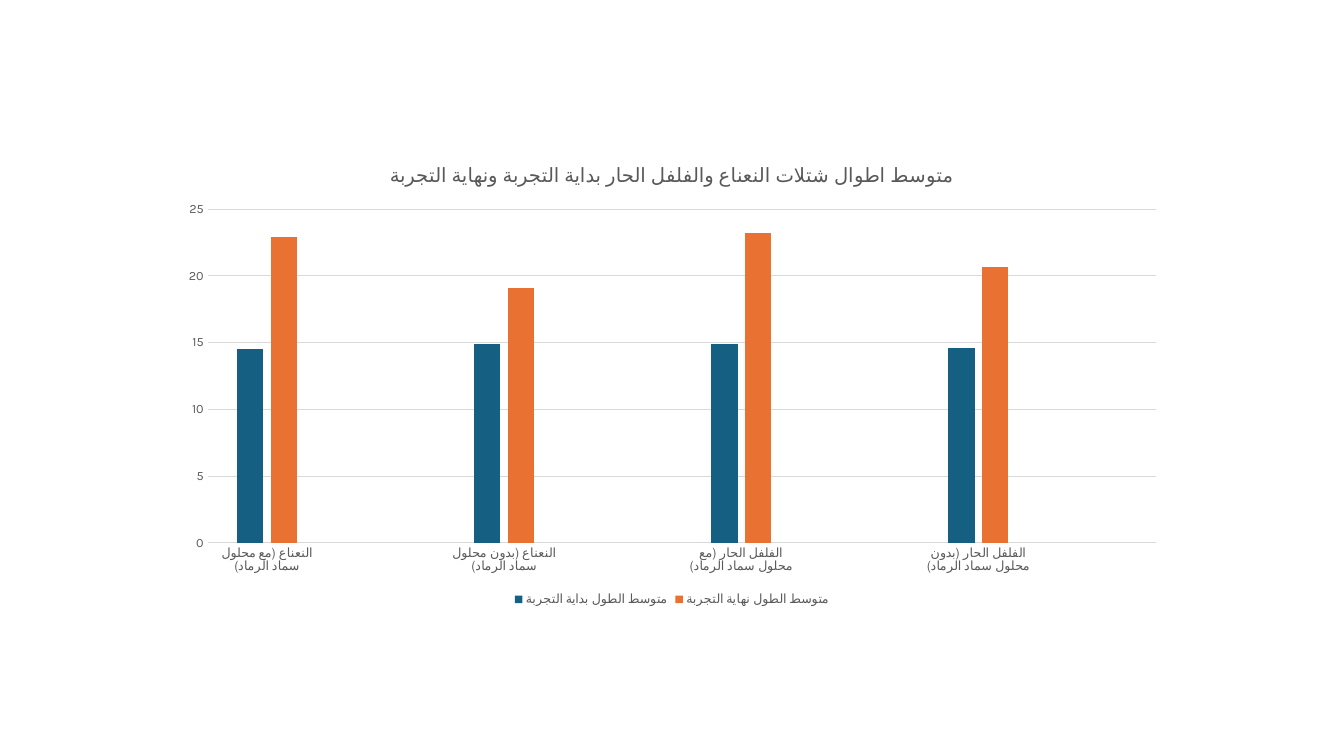
from lxml import etree
from pptx import Presentation
from pptx.chart.data import CategoryChartData
from pptx.dml.color import RGBColor
from pptx.enum.chart import XL_CHART_TYPE, XL_LEGEND_POSITION, XL_TICK_MARK
from pptx.oxml import parse_xml
from pptx.util import Pt

COLUMNS = XL_CHART_TYPE.COLUMN_CLUSTERED
BOTTOM = XL_LEGEND_POSITION.BOTTOM
NO_TICK = XL_TICK_MARK.NONE
CHART_NS = "http://schemas.openxmlformats.org/drawingml/2006/chart"
FACE, GREY, RULE = "Karla", "595959", "D9D9D9"


def color(code):
    return RGBColor.from_string(code)


def style(font, size):
    font.name = FACE
    font.size = Pt(size)
    font.bold = False
    font.color.rgb = color(GREY)


# Slide
deck = Presentation()
deck.slide_width, deck.slide_height = Pt(960), Pt(540)
slide = deck.slides.add_slide(deck.slide_layouts[6])

# Data: every plant group is followed by an empty slot
groups = [
    ("النعناع (مع محلول سماد الرماد)", 14.5, 22.9),
    ("النعناع (بدون محلول سماد الرماد)", 14.9, 19.1),
    ("الفلفل الحار (مع محلول سماد الرماد)", 14.9, 23.2),
    ("الفلفل الحار (بدون محلول سماد الرماد)", 14.6, 20.7),
]
names, starts, ends = [], [], []
for name, start, end in groups:
    names += [name, ""]
    starts += [start, None]
    ends += [end, None]

data = CategoryChartData(number_format="General")
data.categories = names
data.add_series("متوسط الطول بداية التجربة", starts)
data.add_series("متوسط الطول نهاية التجربة", ends)

# Chart
frame = slide.shapes.add_chart(
    COLUMNS, Pt(119.5), Pt(104.4), Pt(720.7), Pt(331.2), data)
chart = frame.chart
style(chart.font, 10)

# Title
chart.has_title = True
title = chart.chart_title.text_frame
title.text = "متوسط اطوال شتلات النعناع والفلفل الحار بداية التجربة ونهاية التجربة"
style(title.paragraphs[0].runs[0].font, 14)
chart.chart_title.include_in_layout = False

# Columns
plot = chart.plots[0]
plot.gap_width, plot.overlap = 219, -27
plot.vary_by_categories = False
for series, code in zip(plot.series, ("156082", "E97132")):
    series.format.fill.solid()
    series.format.fill.fore_color.rgb = color(code)
    series.invert_if_negative = False

# Axes
base, scale = chart.category_axis, chart.value_axis
for axis in (base, scale):
    axis.major_tick_mark = axis.minor_tick_mark = NO_TICK
    style(axis.tick_labels.font, 9)
scale.minimum_scale, scale.maximum_scale, scale.major_unit = 0, 25, 5
scale.has_major_gridlines = True
scale.format.line.fill.background()
for line in (base.format.line, scale.major_gridlines.format.line):
    line.color.rgb = color(RULE)
    line.width = Pt(0.75)

# Legend
chart.has_legend = True
chart.legend.position = BOTTOM
chart.legend.include_in_layout = False
style(chart.legend.font, 9)

# Plot area, as shares of the chart frame
layout = etree.Element(f"{{{CHART_NS}}}layout", nsmap={"c": CHART_NS})
manual = etree.SubElement(layout, f"{{{CHART_NS}}}manualLayout")
for tag, value in (("layoutTarget", "inner"), ("xMode", "edge"),
                   ("yMode", "edge"), ("x", "0.04"), ("y", "0.136"),
                   ("w", "0.94"), ("h", "0.72")):
    etree.SubElement(manual, f"{{{CHART_NS}}}{tag}", val=value)
area = plot._element.getparent()
for old in area.findall(f"{{{CHART_NS}}}layout"):
    area.remove(old)
area.insert(0, parse_xml(etree.tostring(layout)))

deck.save("out.pptx")
